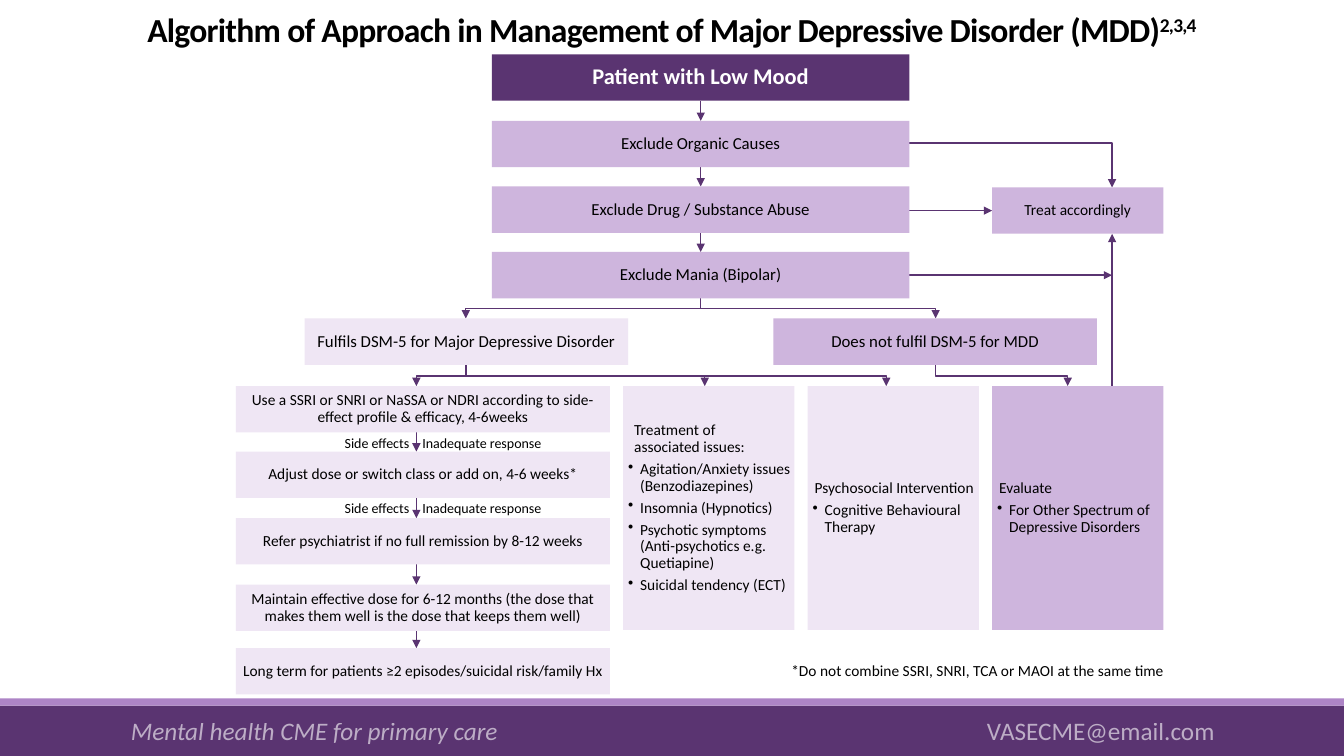
import pptx
import pptx.util
import pptx.dml.color
import pptx.enum.shapes
import pptx.enum.text
import pptx.oxml
import pptx.oxml.ns

PX = 9144  # 100 px to the inch
THEME = {
    "font": "Calibri",
    "dark": "5A3471", "accent": "AD84C6", "medium": "CEB5DD", "light": "EFE6F4",
    "white": "FFFFFF", "black": "000000",
    "title": 24, "footer": 18, "start": 16, "step": 12, "detail": 11, "label": 10,
}
RECTANGLE = pptx.enum.shapes.MSO_SHAPE.RECTANGLE
CENTER = pptx.enum.text.PP_ALIGN.CENTER
LEFT = pptx.enum.text.PP_ALIGN.LEFT
MIDDLE = pptx.enum.text.MSO_ANCHOR.MIDDLE
BOTTOM = pptx.enum.text.MSO_ANCHOR.BOTTOM

presentation = pptx.Presentation()
presentation.slide_width = 1333 * PX
presentation.slide_height = 750 * PX
slide = presentation.slides.add_slide(presentation.slide_layouts[6])
shapes = slide.shapes


def add_text(paragraph, text, size, color="black", bold=False):
    run = paragraph.add_run()
    run.text = text
    run.font.name = THEME["font"]
    run.font.size = pptx.util.Pt(THEME[size])
    run.font.bold = bold
    run.font.color.rgb = pptx.dml.color.RGBColor.from_string(THEME[color])
    return run


def add_arrow(*points):
    if len(points) == 2:
        (x1, y1), (x2, y2) = points
        arrow = shapes.add_connector(pptx.enum.shapes.MSO_CONNECTOR.STRAIGHT,
                                     x1 * PX, y1 * PX, x2 * PX, y2 * PX)
    else:
        builder = shapes.build_freeform(*points[0], scale=PX)
        builder.add_line_segments(points[1:], close=False)
        arrow = builder.convert_to_shape()
        arrow.fill.background()
    arrow.line.color.rgb = pptx.dml.color.RGBColor.from_string(THEME["dark"])
    arrow.line.width = pptx.util.Pt(1)
    head = pptx.oxml.ns.qn("a:tailEnd")
    arrow.line._get_or_add_ln().makeelement(head)
    pptx_line = arrow.line._get_or_add_ln()
    pptx_line.append(pptx_line.makeelement(head, {"type": "triangle"}))
    properties = arrow._element.spPr
    properties.append(properties.makeelement(pptx.oxml.ns.qn("a:effectLst")))


# Grid of the flowchart
BOX_HEIGHT, PANEL_HEIGHT = 46, 242
MAIN_LEFT, MAIN_WIDTH, MAIN_CENTER = 488, 414, 695
MAIN_RIGHT = MAIN_LEFT + MAIN_WIDTH
BRANCH_WIDTH, BRANCH_LEFTS, BRANCH_CENTERS = 321, (302, 767), (462, 928)
CARE_LEFT, CARE_WIDTH, CARE_CENTER = 234, 371, 413
PANEL_WIDTH = 170
PANEL_LEFTS = [618 + 183 * column for column in range(3)]
TREAT_TOP, TREAT_CENTER = 186, 1103
main_tops = [round(54 + 65.5 * row) for row in range(5)]
care_tops = [round(383 + 65.5 * row) for row in range(4)] + [643]
branch_top = main_tops[4]
branch_bottom = branch_top + BOX_HEIGHT
panel_top = care_tops[0]

# Footer bands
for top, height, color in ((700, 50, "dark"), (693, 7, "accent")):
    band = shapes.add_shape(RECTANGLE, 0, top * PX, 1333 * PX, height * PX)
    band.shadow.inherit = False
    band.fill.solid()
    band.fill.fore_color.rgb = pptx.dml.color.RGBColor.from_string(THEME[color])
    band.line.fill.background()

# Arrows down the two columns
for tops, center in ((main_tops[:4], MAIN_CENTER), (care_tops, CARE_CENTER)):
    for top, next_top in zip(tops, tops[1:]):
        add_arrow((center, top + BOX_HEIGHT), (center, next_top))

# Branching arrows
branches = [(MAIN_CENTER, main_tops[3] + BOX_HEIGHT, 306, x, branch_top)
            for x in BRANCH_CENTERS]
branches += [(BRANCH_CENTERS[0], branch_bottom, 373, x, panel_top)
             for x in (CARE_CENTER, 699, 879)]
branches.append((BRANCH_CENTERS[1], branch_bottom, 373, 1059, panel_top))
for x1, y1, turn, x2, y2 in branches:
    add_arrow((x1, y1), (x1, turn), (x2, turn), (x2, y2))

# Arrows to the treatment box
add_arrow((MAIN_RIGHT, 142), (TREAT_CENTER, 142), (TREAT_CENTER, TREAT_TOP))
add_arrow((MAIN_RIGHT, 209), (PANEL_LEFTS[2], 209))
add_arrow((MAIN_RIGHT, 273), (TREAT_CENTER, 273))
add_arrow((TREAT_CENTER, panel_top), (TREAT_CENTER, TREAT_TOP + BOX_HEIGHT))

# Centred boxes: left, top, width, fill, type size, text
boxes = [(MAIN_LEFT, main_tops[0], MAIN_WIDTH, "dark", "start", "Patient with Low Mood")]
for top, text in zip(main_tops[1:], ("Exclude Organic Causes",
                                     "Exclude Drug / Substance Abuse",
                                     "Exclude Mania (Bipolar)")):
    boxes.append((MAIN_LEFT, top, MAIN_WIDTH, "medium", "step", text))
for left, color, text in zip(BRANCH_LEFTS, ("light", "medium"),
                             ("Fulfils DSM-5 for Major Depressive Disorder",
                              "Does not fulfil DSM-5 for MDD")):
    boxes.append((left, branch_top, BRANCH_WIDTH, color, "step", text))
for top, text in zip(care_tops, (
        "Use a SSRI or SNRI or NaSSA or NDRI according to side-effect profile & efficacy, 4-6weeks",
        "Adjust dose or switch class or add on, 4-6 weeks*",
        "Refer psychiatrist if no full remission by 8-12 weeks",
        "Maintain effective dose for 6-12 months (the dose that makes them well is the dose that keeps them well)",
        "Long term for patients ≥2 episodes/suicidal risk/family Hx")):
    boxes.append((CARE_LEFT, top, CARE_WIDTH, "light", "detail", text))
boxes.append((PANEL_LEFTS[2], TREAT_TOP, PANEL_WIDTH, "medium", "detail", "Treat accordingly"))

# Panels: fill, heading indent, heading lines, bullets
panels = (
    ("light", 10, ["Treatment of", "associated issues:"],
     ["Agitation/Anxiety issues (Benzodiazepines)", "Insomnia (Hypnotics)",
      "Psychotic symptoms (Anti-psychotics e.g. Quetiapine)", "Suicidal tendency (ECT)"]),
    ("light", 6, ["Psychosocial Intervention"], ["Cognitive Behavioural Therapy"]),
    ("medium", 6, ["Evaluate"], ["For Other Spectrum of Depressive Disorders"]),
)

# Every block: place, fill, type size, alignment, lines of (text, indent, hanging, space after)
blocks = [(left, top, width, BOX_HEIGHT, color, size, CENTER, [(text, 0, 0, 0.35)])
          for left, top, width, color, size, text in boxes]
for left, (color, indent, headings, bullets) in zip(PANEL_LEFTS, panels):
    lines = [(text, indent, 0, 0.35 if text == headings[-1] else 0) for text in headings]
    lines += [(text, 16, 12, 0.35) for text in bullets]
    blocks.append((left, panel_top, PANEL_WIDTH, PANEL_HEIGHT, color, "detail", LEFT, lines))

for left, top, width, height, color, size, alignment, lines in blocks:
    block = shapes.add_shape(RECTANGLE, left * PX, top * PX, width * PX, height * PX)
    block.shadow.inherit = False
    block.fill.solid()
    block.fill.fore_color.rgb = pptx.dml.color.RGBColor.from_string(THEME[color])
    block.line.fill.background()
    frame = block.text_frame
    frame.word_wrap = True
    frame.vertical_anchor = MIDDLE
    frame.margin_left = frame.margin_right = frame.margin_top = frame.margin_bottom = PX
    for number, (text, indent, hanging, space_after) in enumerate(lines):
        paragraph = frame.add_paragraph() if number else frame.paragraphs[0]
        paragraph.alignment = alignment
        paragraph.line_spacing = 0.9
        paragraph.space_after = pptx.util.Pt(THEME[size] * space_after)
        properties = paragraph._p.get_or_add_pPr()
        properties.set("marL", str(indent * PX))
        properties.set("indent", str(-hanging * PX))
        if hanging:
            properties.append(properties.makeelement(pptx.oxml.ns.qn("a:buChar"), {"char": "•"}))
        is_start = size == "start"
        add_text(paragraph, text, size, "white" if is_start else "black", is_start)

# Title
title = shapes.add_textbox(0, 0, 1333 * PX, 54 * PX).text_frame
title.word_wrap = True
title.vertical_anchor = BOTTOM
paragraph = title.paragraphs[0]
paragraph.alignment = CENTER
paragraph.line_spacing = 0.85
for text, baseline in (
        ("Algorithm of Approach in Management of Major Depressive Disorder (MDD)", 0),
        ("2,3,4", 30000)):
    properties = add_text(paragraph, text, "title", bold=True).font._element
    properties.set("spc", "-50")
    properties.set("baseline", str(baseline))

# Free text: left, top, width, height, size, colour, tab stop, runs of (text, italic)
labels = [(332, top, 233, 27, "label", "black", 77,
           [("Side effects\tInadequate response", False)]) for top in (426, 491)]
labels.append((775, 651, 417, 29, "detail", "black", 0,
               [("*Do not combine SSRI, SNRI, TCA or MAOI at the same time", False)]))
labels.append((120, 705, 1100, 40, "footer", "white", 849,
               [("Mental health CME for primary care\t", True), ("VASECME@email.com", False)]))
for left, top, width, height, size, color, tab, runs in labels:
    frame = shapes.add_textbox(left * PX, top * PX, width * PX, height * PX).text_frame
    frame.word_wrap = True
    paragraph = frame.paragraphs[0]
    if tab:
        properties = paragraph._p.get_or_add_pPr()
        stops = properties.makeelement(pptx.oxml.ns.qn("a:tabLst"))
        stops.append(stops.makeelement(pptx.oxml.ns.qn("a:tab"),
                                       {"pos": str(tab * PX), "algn": "l"}))
        properties.append(stops)
    for text, italic in runs:
        run = add_text(paragraph, text, size, color)
        run.font.italic = italic
        if size == "footer":
            tint = run.font._element.find(".//" + pptx.oxml.ns.qn("a:srgbClr"))
            tint.append(tint.makeelement(pptx.oxml.ns.qn("a:alpha"), {"val": "60000"}))

presentation.save("out.pptx")
